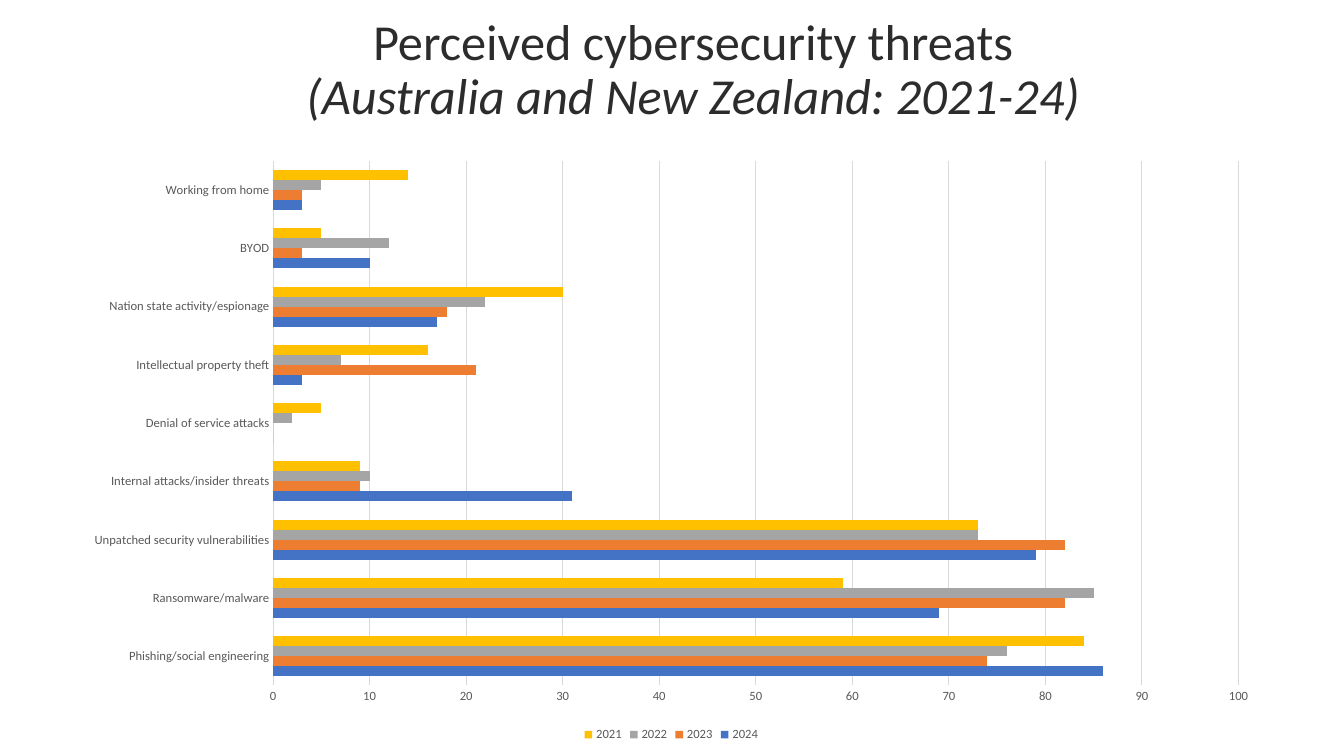
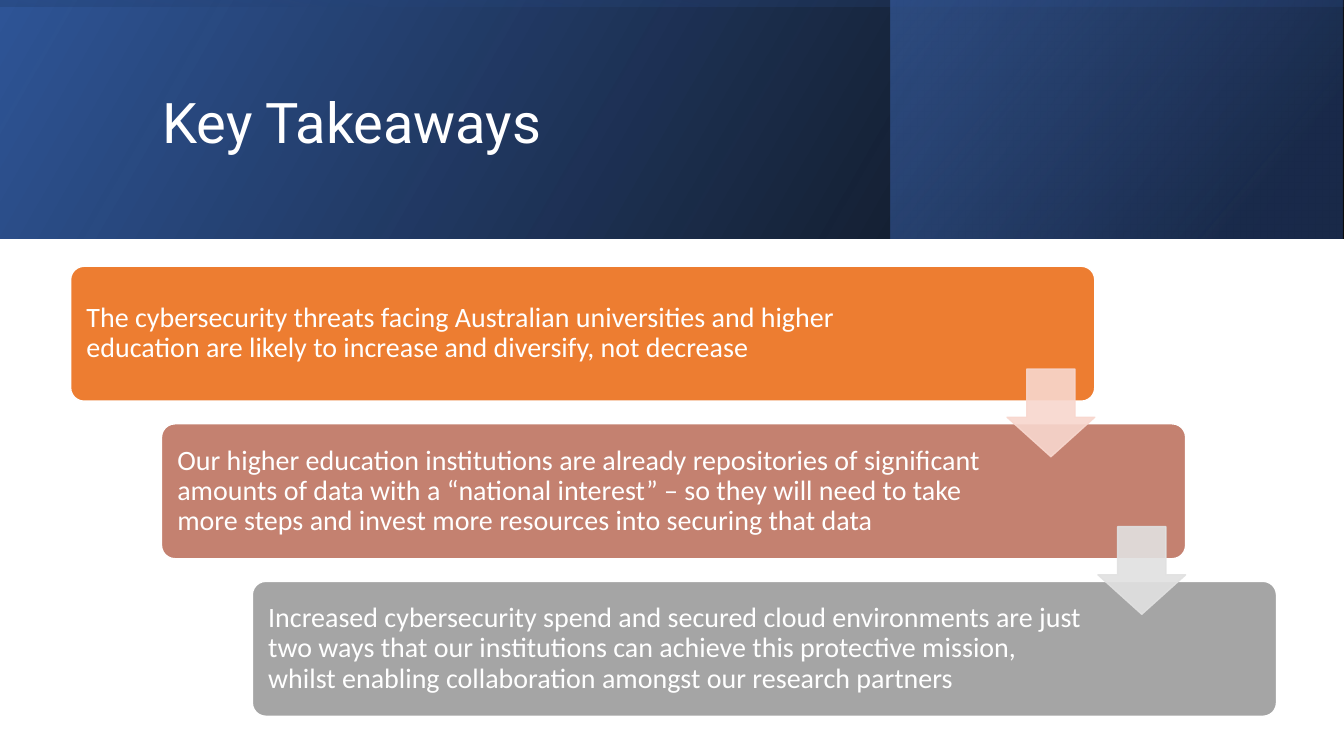
from lxml import etree
from pptx import Presentation
from pptx.chart.data import CategoryChartData
from pptx.dml.color import RGBColor
from pptx.enum import chart as ch, shapes, text
from pptx.oxml import ns
from pptx.util import Cm, Pt

# Shared look
BODY_FONT, HEAD_FONT = "Calibri", "Roboto"
WHITE, INK, GREY, RULE = "FFFFFF", "2C2C2C", "595959", "D9D9D9"
BLUE, ORANGE, SILVER, GOLD = "4472C4", "ED7D31", "A5A5A5", "FFC000"
NAVY, BLACK = "2F5597", "000000"
SLIDE_W, SLIDE_H, BAND_H = 33.87, 19.05, 6.02

CATEGORIES = [
    "Phishing/social engineering", "Ransomware/malware",
    "Unpatched security vulnerabilities", "Internal attacks/insider threats",
    "Denial of service attacks", "Intellectual property theft",
    "Nation state activity/espionage", "BYOD", "Working from home"]
SERIES = [
    ("2024", BLUE, (86, 69, 79, 31, 0, 3, 17, 10, 3)),
    ("2023", ORANGE, (74, 82, 82, 9, 0, 21, 18, 3, 3)),
    ("2022", SILVER, (76, 85, 73, 10, 2, 7, 22, 12, 5)),
    ("2021", GOLD, (84, 59, 73, 9, 5, 16, 30, 5, 14))]

# Band boxes: left, top, width, height, rotation, gradient angle, stops
BANDS = [
    (0, 0, SLIDE_W, BAND_H, 0, 330, [(0, BLACK, 96), (100, NAVY, 100)]),
    (22.45, 0, 11.38, BAND_H, 0, 320, [(19, "203864", 68), (100, BLUE, 48)]),
    ((SLIDE_W - BAND_H) / 2, (BAND_H - SLIDE_W) / 2, BAND_H, SLIDE_W, 270, 350,
     [(23, NAVY, 16), (99, BLACK, 45)])]

# Takeaways: text, fill, right inset, colour of the arrow leading on
TAKEAWAYS = [
    ("The cybersecurity threats facing Australian universities and higher "
     "education are likely to increase and diversify, not decrease",
     ORANGE, 3.78, "F8D7CE"),
    ("Our higher education institutions are already repositories of significant "
     "amounts of data with a “national interest” – so they will need to take "
     "more steps and invest more resources into securing that data",
     "C48170", 4.8, "E1E1E1"),
    ("Increased cybersecurity spend and secured cloud environments are just "
     "two ways that our institutions can achieve this protective mission, "
     "whilst enabling collaboration amongst our research partners",
     SILVER, 4.8, None)]


def rgb(value):
    return RGBColor.from_string(value)


def style_font(font, size, color, name=BODY_FONT, italic=None):
    font.size, font.name, font.italic = Pt(size), name, italic
    font.color.rgb = rgb(color)


def write(p, content, size, color, align=text.PP_ALIGN.LEFT, name=BODY_FONT,
          italic=None):
    p.alignment, p.line_spacing = align, 0.9
    r = p.add_run()
    r.text = content
    style_font(r.font, size, color, name, italic)


def set_title(s, box, lines, **fmt):
    """Place the title on top; lines holds (text, italic) pairs."""
    title = s.shapes.title
    s.shapes._spTree.append(title._element)
    title.left, title.top, title.width, title.height = map(Cm, box)
    tf = title.text_frame
    tf.word_wrap, tf.auto_size = True, text.MSO_AUTO_SIZE.NONE
    tf.vertical_anchor = text.MSO_ANCHOR.MIDDLE
    for i, (content, italic) in enumerate(lines):
        if i:
            tf.paragraphs[0].add_line_break()
        write(tf.paragraphs[0], content, italic=italic, **fmt)


def add_shape(s, kind, box, fill, line=None, adjust=()):
    sp = s.shapes.add_shape(kind, *map(Cm, box))
    sp.shadow.inherit = False
    for i, value in enumerate(adjust):
        sp.adjustments[i] = value
    sp.fill.solid()
    sp.fill.fore_color.rgb = rgb(fill)
    if line:
        sp.line.color.rgb, sp.line.width = rgb(line), Pt(1)
    else:
        sp.line.fill.background()
    return sp


def add_alpha(color, percent):
    etree.SubElement(color, ns.qn("a:alpha"), val=str(percent * 1000))


def add_band(s, left, top, width, height, rotation, angle, stops):
    sp = add_shape(s, shapes.MSO_SHAPE.RECTANGLE, (left, top, width, height), NAVY)
    sp.rotation = rotation
    spPr = sp._element.spPr
    spPr.find(ns.qn("a:xfrm")).set("flipH", "1")
    grad = etree.Element(ns.qn("a:gradFill"), rotWithShape="1")
    stop_list = etree.SubElement(grad, ns.qn("a:gsLst"))
    for position, color, alpha in stops:
        stop = etree.SubElement(stop_list, ns.qn("a:gs"), pos=str(position * 1000))
        add_alpha(etree.SubElement(stop, ns.qn("a:srgbClr"), val=color), alpha)
    etree.SubElement(grad, ns.qn("a:lin"), ang=str(angle * 60000), scaled="0")
    spPr.replace(spPr.find(ns.qn("a:solidFill")), grad)


def add_takeaway(s, box, content, fill, right_inset):
    sp = add_shape(s, shapes.MSO_SHAPE.ROUNDED_RECTANGLE, box, fill, WHITE, [0.1])
    tf = sp.text_frame
    tf.word_wrap, tf.vertical_anchor = True, text.MSO_ANCHOR.MIDDLE
    tf.margin_left, tf.margin_right = Cm(0.3), Cm(right_inset)
    write(tf.paragraphs[0], content, 20, WHITE)


def add_arrow(s, box, color):
    sp = add_shape(s, shapes.MSO_SHAPE.DOWN_ARROW, box, color, color, [0.55, 0.45])
    for clr in sp._element.spPr.iter(ns.qn("a:srgbClr")):
        add_alpha(clr, 90)


def add_bar_chart(s, box):
    data = CategoryChartData()
    data.categories = CATEGORIES
    for name, _, values in SERIES:
        data.add_series(name, values)
    chart = s.shapes.add_chart(ch.XL_CHART_TYPE.BAR_CLUSTERED, *map(Cm, box),
                               data).chart
    style_font(chart.font, 10, BLACK)
    chart.has_title = False
    chart.has_legend = True
    chart.legend.position = ch.XL_LEGEND_POSITION.BOTTOM
    chart.legend.include_in_layout = False
    style_font(chart.legend.font, 9, GREY)

    plot = chart.plots[0]
    plot.gap_width, plot.overlap, plot.vary_by_categories = 182, 0, False
    for series, (_, color, _) in zip(plot.series, SERIES):
        series.format.fill.solid()
        series.format.fill.fore_color.rgb = rgb(color)

    cat, val = chart.category_axis, chart.value_axis
    for axis in (cat, val):
        axis.major_tick_mark = axis.minor_tick_mark = ch.XL_TICK_MARK.NONE
        style_font(axis.tick_labels.font, 9, GREY)
    val.minimum_scale, val.maximum_scale, val.major_unit = 0, 100, 10
    val.format.line.fill.background()
    for line in (cat.format.line, val.major_gridlines.format.line):
        line.color.rgb, line.width = rgb(RULE), Pt(0.75)


def threats_slide(s):
    add_bar_chart(s, (1.78, 3.76, 30.28, 15.04))
    set_title(s, (2.87, 0.35, 29.21, 2.9),
              [("Perceived cybersecurity threats", None),
               ("(Australia and New Zealand: 2021-24)", True)],
              size=36, color=INK, align=text.PP_ALIGN.CENTER)


def takeaways_slide(s):
    for band in BANDS:
        add_band(s, *band)
    set_title(s, (3.84, 0.97, 27, 4.37), [("Key Takeaways", None)],
              size=40, color=WHITE, name=HEAD_FONT)

    # Stepped boxes, then the arrows that overlap them
    width, height, arrow = 25.81, 3.4, 2.21
    steps = [(1.78 + 2.29 * i, 6.71 + 3.97 * i) for i in range(len(TAKEAWAYS))]
    for (x, y), (content, fill, inset, _) in zip(steps, TAKEAWAYS):
        add_takeaway(s, (x, y, width, height), content, fill, inset)
    for (x, y), (_, _, _, color) in zip(steps, TAKEAWAYS):
        if color:
            add_arrow(s, (x + width - arrow, y + 2.59, arrow, arrow), color)


def main():
    prs = Presentation()
    prs.slide_width, prs.slide_height = Cm(SLIDE_W), Cm(SLIDE_H)
    title_only = prs.slide_layouts[5]
    for build in (threats_slide, takeaways_slide):
        build(prs.slides.add_slide(title_only))
    prs.save("out.pptx")


if __name__ == "__main__":
    main()
